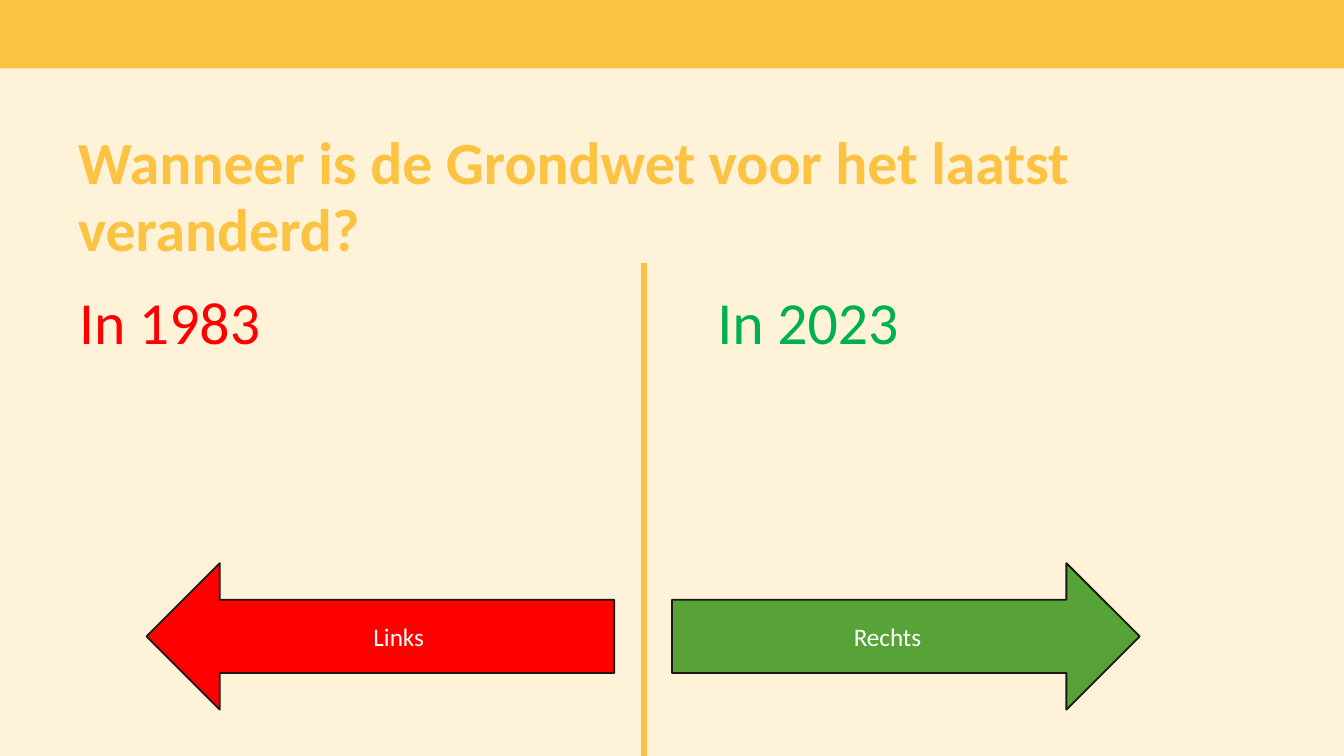
from lxml.etree import SubElement
from pptx import Presentation
from pptx.dml.color import RGBColor
from pptx.enum.shapes import MSO_CONNECTOR, MSO_SHAPE
from pptx.enum.text import MSO_ANCHOR, MSO_AUTO_SIZE, PP_ALIGN
from pptx.oxml.ns import qn
from pptx.util import Inches, Pt

GOLD = "FCC241"
CREAM = "FEF3D9"
RED = "FF0000"
GREEN = "00B050"
LEAF = "58A337"
INK = "1A1918"
WHITE = "FFFFFF"


def rgb(code):
    return RGBColor.from_string(code)


def box(*sizes):
    return [Inches(size) for size in sizes]


def write(frame, text, size=32, color=INK, bold=False,
          align=PP_ALIGN.LEFT, anchor=MSO_ANCHOR.TOP, space=None):
    frame.word_wrap = True
    frame.vertical_anchor = anchor
    para = frame.paragraphs[0]
    para.alignment = align
    if space:
        para.line_spacing = Pt(space)
    run = para.add_run()
    run.text = text
    font = run.font
    font.name = "Calibri"
    font.size = Pt(size)
    font.bold = bold
    font.color.rgb = rgb(color)


def add_shape(slide, kind, place, fill, line=None):
    shape = slide.shapes.add_shape(kind, *box(*place))
    shape.shadow.inherit = False
    shape.fill.solid()
    shape.fill.fore_color.rgb = rgb(fill)
    if line:
        shape.line.color.rgb = rgb(line)
        shape.line.width = Pt(1)
    else:
        shape.line.fill.background()
    return shape


def add_rule(slide, ends, color, width):
    rule = slide.shapes.add_connector(MSO_CONNECTOR.STRAIGHT, *box(*ends))
    rule.line.color.rgb = rgb(color)
    rule.line.width = Pt(width)
    SubElement(rule._element.spPr, qn("a:effectLst"))


def add_arrow(slide, kind, left, fill, text):
    arrow = add_shape(slide, kind, (left, 4.19, 3.48, 1.09), fill, INK)
    write(arrow.text_frame, text, size=13.5, color=WHITE,
          align=PP_ALIGN.CENTER, anchor=MSO_ANCHOR.MIDDLE)


def add_choice(slide, left, width, text, color):
    label = slide.shapes.add_textbox(*box(left, 2.07, width, 0.64))
    write(label.text_frame, text, color=color)
    label.text_frame.auto_size = MSO_AUTO_SIZE.SHAPE_TO_FIT_TEXT


def set_title(slide, text):
    title = slide.shapes.title
    title.left, title.top, title.width, title.height = box(0.58, 0.91, 9, 0.98)
    frame = title.text_frame
    frame.auto_size = MSO_AUTO_SIZE.NONE
    frame.margin_left = frame.margin_right = frame.margin_bottom = 0
    frame.margin_top = Inches(0.05)
    write(frame, text, color=GOLD, bold=True, space=36)


def main():
    deck = Presentation()
    deck.slide_width, deck.slide_height = box(10, 10 * 9 / 16)
    slide = deck.slides.add_slide(deck.slide_layouts[5])
    slide.background.fill.solid()
    slide.background.fill.fore_color.rgb = rgb(CREAM)

    add_shape(slide, MSO_SHAPE.RECTANGLE, (0, 0, 10, 0.51), GOLD)
    add_rule(slide, (4.79, 1.96, 4.79, 7.71), GOLD, 3)
    add_arrow(slide, MSO_SHAPE.RIGHT_ARROW, 5, LEAF, "Rechts")
    add_arrow(slide, MSO_SHAPE.LEFT_ARROW, 1.09, RED, "Links")
    set_title(slide, "Wanneer is de Grondwet voor het laatst veranderd?")
    add_choice(slide, 0.49, 2.95, "In 1983", RED)
    add_choice(slide, 5.24, 3.84, "In 2023", GREEN)
    deck.save("out.pptx")


if __name__ == "__main__":
    main()
